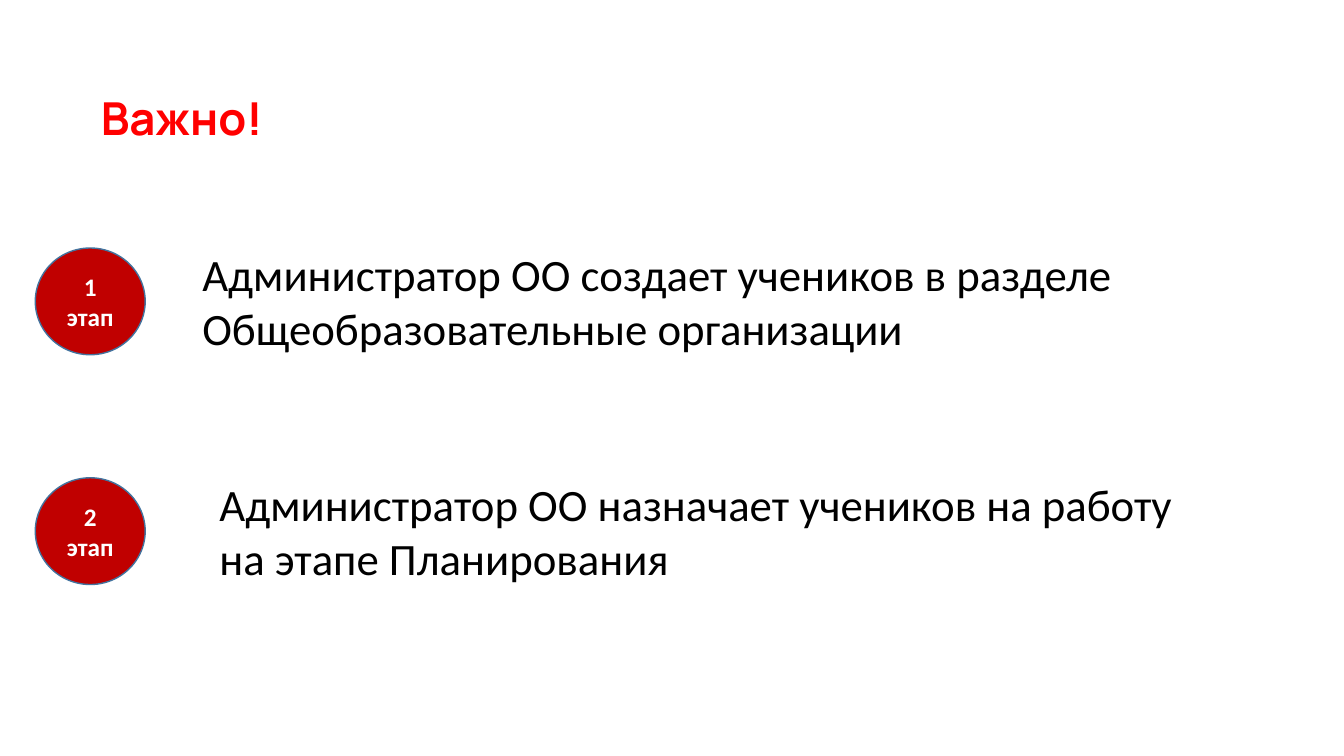
from pptx import Presentation
from pptx import util as u
from pptx.dml.color import RGBColor
from pptx.enum import shapes, text

# Content: number label, step text, left edge of the step text (cm)
TITLE = "Важно!"
STEPS = [
    ("1 этап", "Администратор ОО создает учеников в разделе Общеобразовательные организации", 4.85),
    ("2 этап", "Администратор ОО назначает учеников на работу на этапе Планирования", 5.28),
]
COLORS = {"title": "FF0000", "body": "000000", "badge": "C00000",
          "outline": "43739E", "label": "FFFFFF"}

# Layout in cm
FIRST_TOP, STEP_PITCH = 6.1, 5.79
TEXT_RIGHT, TEXT_HEIGHT = 30.31, 2.99
BADGE_LEFT, BADGE_WIDTH, BADGE_HEIGHT = 0.89, 2.77, 2.69


def color(name):
    return RGBColor.from_string(COLORS[name])


def write(shape, content, size, fill, font="Calibri", bold=False, spacing=None,
          align=text.PP_ALIGN.LEFT, anchor=text.MSO_ANCHOR.TOP):
    frame = shape.text_frame
    frame.word_wrap = True
    frame.vertical_anchor = anchor
    paragraph = frame.paragraphs[0]
    paragraph.alignment = align
    paragraph.line_spacing = spacing
    run = paragraph.add_run()
    run.text = content
    run.font.name = font
    run.font.size = u.Pt(size)
    run.font.bold = bold
    run.font.color.rgb = color(fill)


def add_text_box(slide, left, top, width, height):
    return slide.shapes.add_textbox(u.Cm(left), u.Cm(top), u.Cm(width), u.Cm(height))


def add_badge(slide, label, top):
    badge = slide.shapes.add_shape(shapes.MSO_SHAPE.OVAL, u.Cm(BADGE_LEFT), u.Cm(top),
                                   u.Cm(BADGE_WIDTH), u.Cm(BADGE_HEIGHT))
    badge.shadow.inherit = False
    badge.fill.solid()
    badge.fill.fore_color.rgb = color("badge")
    badge.line.color.rgb = color("outline")
    badge.line.width = u.Pt(1)
    write(badge, label, 18, "label", bold=True,
          align=text.PP_ALIGN.CENTER, anchor=text.MSO_ANCHOR.MIDDLE)


def main():
    presentation = Presentation()
    presentation.slide_width, presentation.slide_height = u.Cm(33.87), u.Cm(19.05)
    slide = presentation.slides.add_slide(presentation.slide_layouts[6])

    # Heading
    heading = add_text_box(slide, 2.29, 2.31, 26.59, 1.47)
    write(heading, TITLE, 32.4, "title", font="Manrope", bold=True, spacing=0.9,
          anchor=text.MSO_ANCHOR.MIDDLE)

    # Steps: text with a round badge centred on it
    for index, (label, description, left) in enumerate(STEPS):
        top = FIRST_TOP + index * STEP_PITCH
        box = add_text_box(slide, left, top, TEXT_RIGHT - left, TEXT_HEIGHT)
        write(box, description, 32, "body")
        add_badge(slide, label, top + (TEXT_HEIGHT - BADGE_HEIGHT) / 2)

    presentation.save("out.pptx")


if __name__ == "__main__":
    main()
